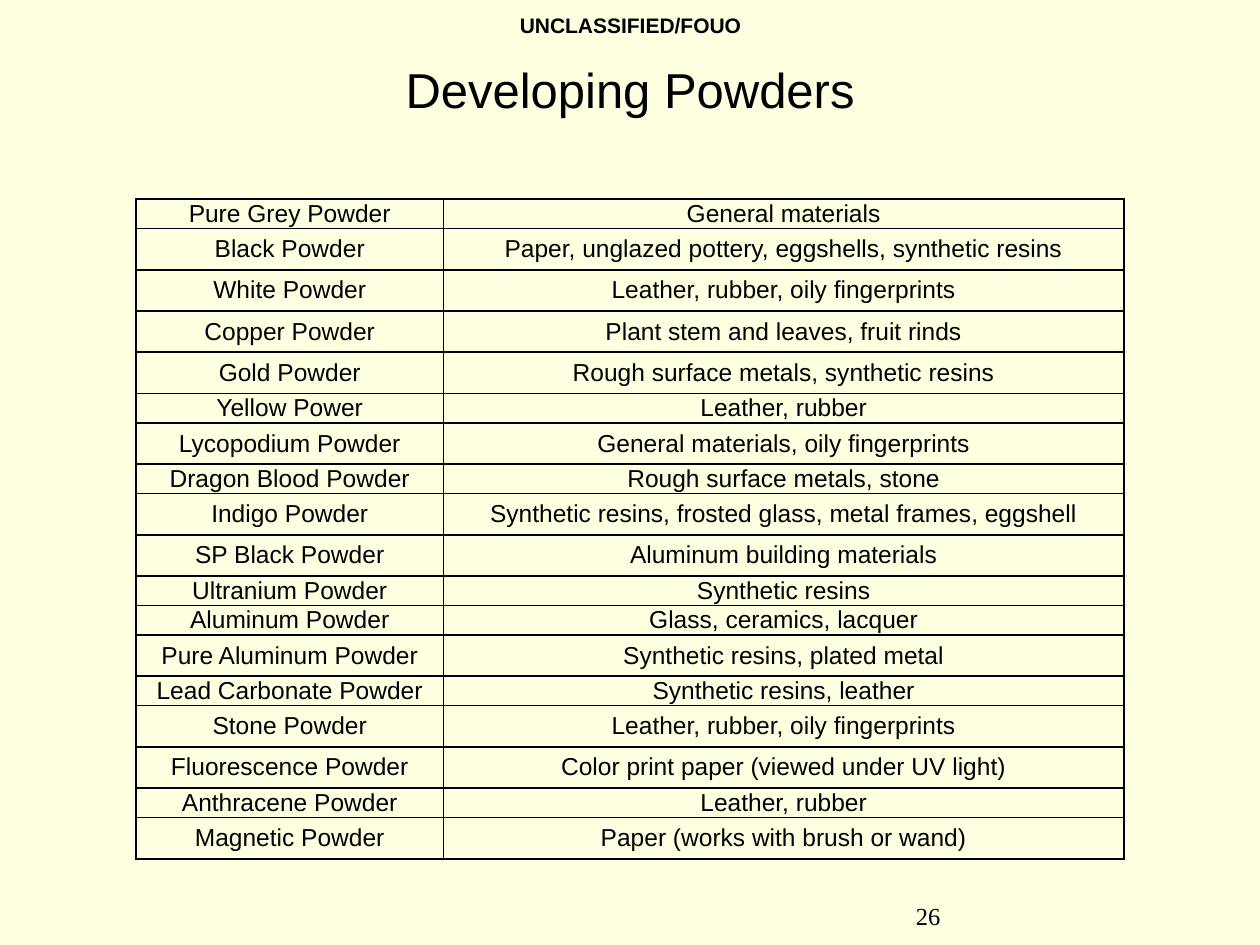
from lxml import etree
from pptx import Presentation
from pptx import util as u
from pptx.dml.color import RGBColor
from pptx.enum import text
from pptx.oxml import ns

INK = "000000"
PAPER = "FFFFE2"
SHORT_ROW = 0.23
POWDERS = [
    ("Pure Grey Powder", "General materials"),
    ("Black Powder", "Paper, unglazed pottery, eggshells, synthetic resins"),
    ("White Powder", "Leather, rubber, oily fingerprints"),
    ("Copper Powder", "Plant stem and leaves, fruit rinds"),
    ("Gold Powder", "Rough surface metals, synthetic resins"),
    ("Yellow Power", "Leather, rubber"),
    ("Lycopodium Powder", "General materials, oily fingerprints"),
    ("Dragon Blood Powder", "Rough surface metals, stone"),
    ("Indigo Powder", "Synthetic resins, frosted glass, metal frames, eggshell"),
    ("SP Black Powder", "Aluminum building materials"),
    ("Ultranium Powder", "Synthetic resins"),
    ("Aluminum Powder", "Glass, ceramics, lacquer"),
    ("Pure Aluminum Powder", "Synthetic resins, plated metal"),
    ("Lead Carbonate Powder", "Synthetic resins, leather"),
    ("Stone Powder", "Leather, rubber, oily fingerprints"),
    ("Fluorescence Powder", "Color print paper (viewed under UV light)"),
    ("Anthracene Powder", "Leather, rubber"),
    ("Magnetic Powder", "Paper (works with brush or wand)"),
]
SHORT_ROWS = {0, 5, 7, 10, 11, 13, 16}


def color(hex_value):
    return RGBColor.from_string(hex_value)


def write(tf, words, size, font="Arial", bold=False, align=text.PP_ALIGN.CENTER):
    p = tf.paragraphs[0]
    p.text = words
    p.alignment = align
    p.font.size = u.Pt(size)
    p.font.name = font
    p.font.bold = bold
    p.font.color.rgb = color(INK)


def add_label(s, box, words, size, anchor=text.MSO_ANCHOR.TOP, **style):
    tf = s.shapes.add_textbox(*map(u.Inches, box)).text_frame
    tf.word_wrap = True
    tf.vertical_anchor = anchor
    write(tf, words, size, **style)


def place_title(s, box, words):
    sp = s.shapes.title
    sp.left, sp.top, sp.width, sp.height = map(u.Inches, box)
    tf = sp.text_frame
    tf.auto_size = text.MSO_AUTO_SIZE.NONE
    tf.vertical_anchor = text.MSO_ANCHOR.MIDDLE
    write(tf, words, 28)


def add_borders(cell):
    tc_pr = cell._tc.get_or_add_tcPr()
    for position, side in enumerate(("lnL", "lnR", "lnT", "lnB")):
        ln = etree.Element(ns.qn(f"a:{side}"), w=str(u.Pt(1)))
        fill = etree.SubElement(ln, ns.qn("a:solidFill"))
        etree.SubElement(fill, ns.qn("a:srgbClr"), val=INK)
        tc_pr.insert(position, ln)


def add_powder_table(s, box, first_col):
    width, height = box[2:]
    frame = s.shapes.add_table(len(POWDERS), 2, *map(u.Inches, box))
    table = frame.table
    table.first_row = table.horz_banding = False
    for col, col_width in zip(table.columns, (first_col, width - first_col)):
        col.width = u.Inches(col_width)
    tall_row = (height - len(SHORT_ROWS) * SHORT_ROW) / (len(POWDERS) - len(SHORT_ROWS))
    for i, powder in enumerate(POWDERS):
        table.rows[i].height = u.Inches(SHORT_ROW if i in SHORT_ROWS else tall_row)
        for j, words in enumerate(powder):
            cell = table.cell(i, j)
            cell.margin_left = cell.margin_right = 0
            cell.margin_top = cell.margin_bottom = 0
            cell.vertical_anchor = text.MSO_ANCHOR.MIDDLE
            cell.fill.background()
            add_borders(cell)
            write(cell.text_frame, words, 14)


def main():
    prs = Presentation()
    prs.slide_width, prs.slide_height = u.Inches(10), u.Inches(7.5)
    s = prs.slides.add_slide(prs.slide_layouts[5])
    s.background.fill.solid()
    s.background.fill.fore_color.rgb = color(PAPER)
    add_label(s, (3.42, 0, 3.17, 0.4), "UNCLASSIFIED/FOUO", 12,
              anchor=text.MSO_ANCHOR.MIDDLE, bold=True)
    add_label(s, (7.17, 7.1, 2.33, 0.4), "26", 14,
              font="Times New Roman", align=text.PP_ALIGN.LEFT)
    place_title(s, (0, 0.42, 10, 0.57), "Developing Powders")
    add_powder_table(s, (1.08, 1.58, 7.84, 5.21), first_col=2.44)
    prs.save("out.pptx")


if __name__ == "__main__":
    main()
